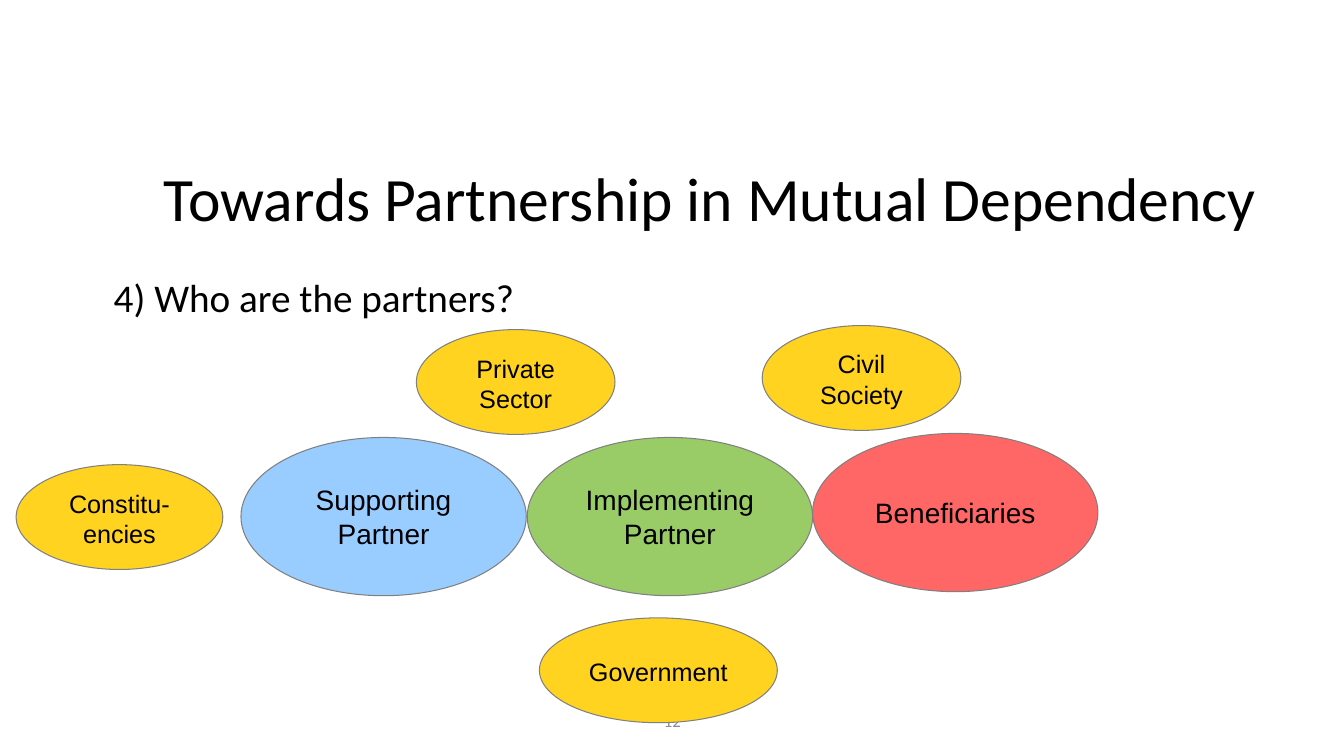
"""Build the slide on partners in mutual dependency."""
import pptx
import pptx.dml.color
import pptx.enum.shapes
import pptx.enum.text
import pptx.util

Inches = pptx.util.Inches
Pt = pptx.util.Pt
Align = pptx.enum.text.PP_ALIGN
Anchor = pptx.enum.text.MSO_ANCHOR


def color(hex_string):
    return pptx.dml.color.RGBColor.from_string(hex_string)


def write(shape, text, size, font_name, alignment, anchor, hex_string="000000"):
    frame = shape.text_frame
    frame.word_wrap = True
    frame.auto_size = pptx.enum.text.MSO_AUTO_SIZE.NONE
    frame.vertical_anchor = anchor
    paragraph = frame.paragraphs[0]
    paragraph.text = text
    paragraph.alignment = alignment
    paragraph.font.size = Pt(size)
    paragraph.font.name = font_name
    paragraph.font.color.rgb = color(hex_string)
    return paragraph


presentation = pptx.Presentation()
presentation.slide_width = Inches(13.33)
presentation.slide_height = Inches(7.5)
slide = presentation.slides.add_slide(presentation.slide_layouts[5])

number = slide.shapes.add_textbox(Inches(4.42), Inches(6.95), Inches(4.5), Inches(0.4))
write(number, "12", 12, "Calibri", Align.CENTER, Anchor.MIDDLE, "8C8C8C")

title = slide.shapes.title
title.left, title.top = Inches(1.07), Inches(1.27)
title.width, title.height = Inches(11.5), Inches(1.45)
paragraph = write(title, "Towards Partnership in Mutual Dependency", 44, "Calibri",
                  Align.RIGHT, Anchor.MIDDLE)
paragraph.line_spacing = 0.9

question = slide.shapes.add_textbox(Inches(0.9), Inches(2.72), Inches(11.5), Inches(4.76))
paragraph = write(question, "4) Who are the partners?", 28, "Calibri", Align.LEFT, Anchor.TOP)
paragraph.line_spacing = 0.9
paragraph.space_after = Pt(14.2)
properties = paragraph._p.get_or_add_pPr()
properties.set("marL", str(Inches(0.71)))
properties.set("indent", str(Inches(-0.58)))

main_style = (1.57, 20, 0.05)
side_style = (1.04, 18, 0.07)
partners = [
    ("Supporting Partner", 2.39, 4.34, 2.83, "99CCFF", main_style),
    ("Implementing Partner", 5.23, 4.34, 2.83, "99CC66", main_style),
    ("Beneficiaries", 8.06, 4.3, 2.83, "FF6666", main_style),
    ("Constitu-encies", 0.16, 4.61, 2.05, "FFD320", side_style),
    ("Private Sector", 4.13, 3.27, 1.97, "FFD320", side_style),
    ("Government", 5.35, 6.13, 2.36, "FFD320", side_style),
    ("Civil Society", 7.56, 3.23, 1.97, "FFD320", side_style),
]
for name, left, top, width, fill, (height, size, top_margin) in partners:
    ellipse = slide.shapes.add_shape(pptx.enum.shapes.MSO_SHAPE.OVAL, Inches(left),
                                     Inches(top), Inches(width), Inches(height))
    ellipse.shadow.inherit = False
    ellipse.fill.solid()
    ellipse.fill.fore_color.rgb = color(fill)
    ellipse.line.color.rgb = color("808080")
    ellipse.line.width = Pt(0.75)
    ellipse.text_frame.margin_top = Inches(top_margin)
    write(ellipse, name, size, "Arial", Align.CENTER, Anchor.MIDDLE)

presentation.save("out.pptx")
